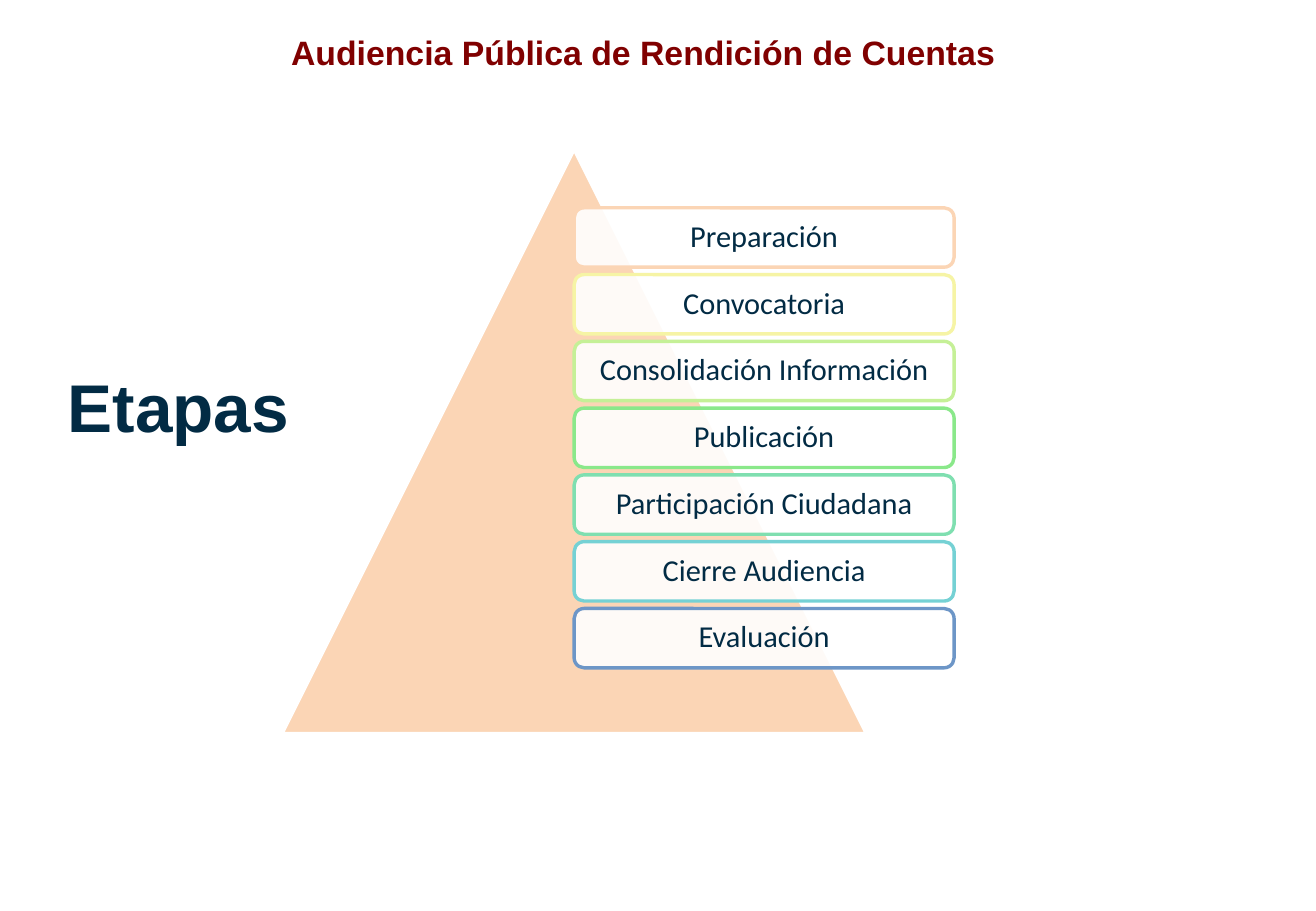
from pptx import Presentation
from pptx import util as u
from pptx.dml.color import RGBColor
from pptx.enum import shapes, text
from pptx.oxml.ns import qn
from lxml import etree

WIDE, HIGH = 10.83, 7.5
NAVY, MAROON, PEACH, WHITE = "022B44", "800000", "FBD5B5", "FFFFFF"
STAGES = [
    ("Preparación", PEACH),
    ("Convocatoria", "F6F4A5"),
    ("Consolidación Información", "C5F097"),
    ("Publicación", "8AE88A"),
    ("Participación Ciudadana", "7FDFB0"),
    ("Cierre Audiencia", "75D1D4"),
    ("Evaluación", "6D96C7"),
]


def tint(color, code):
    color.rgb = RGBColor.from_string(code)


def write(frame, words, face, size, code, bold=False, align=text.PP_ALIGN.CENTER):
    para = frame.paragraphs[0]
    para.alignment = align
    run = para.add_run()
    run.text = words
    run.font.name, run.font.size, run.font.bold = face, u.Pt(size), bold
    tint(run.font.color, code)
    return para


def label(slide, box, words, size, code, wrap, align):
    area = slide.shapes.add_textbox(*map(u.Inches, box))
    area.text_frame.word_wrap = wrap
    write(area.text_frame, words, "Arial", size, code, True, align)


def block(slide, kind, box, fill, edge):
    item = slide.shapes.add_shape(kind, *map(u.Inches, box))
    item.shadow.inherit = False
    item.fill.solid()
    tint(item.fill.fore_color, fill)
    tint(item.line.color, edge)
    item.line.width = u.Pt(2)
    return item


def stage(slide, box, words, edge):
    card = block(slide, shapes.MSO_SHAPE.ROUNDED_RECTANGLE, box, WHITE, edge)
    shade = card.fill._xPr.find(qn("a:solidFill"))[0]
    etree.SubElement(shade, qn("a:alpha"), val="90000")
    frame = card.text_frame
    frame.word_wrap = True
    frame.vertical_anchor = text.MSO_ANCHOR.MIDDLE
    frame.margin_left = frame.margin_right = u.Inches(0.09)
    frame.margin_top = frame.margin_bottom = u.Inches(0.07)
    write(frame, words, "Calibri", 18, NAVY).line_spacing = 0.9


def pyramid(slide, left, top, side):
    """Triangle with one card per stage, stacked from its middle axis."""
    block(slide, shapes.MSO_SHAPE.ISOSCELES_TRIANGLE,
          (left, top, side, side), PEACH, WHITE)
    step = side * 0.8 / len(STAGES)
    for row, (words, edge) in enumerate(STAGES):
        box = (left + side / 2, top + side / 10 + row * step,
               side * 0.65, step * 8 / 9)
        stage(slide, box, words, edge)


def main():
    deck = Presentation()
    deck.slide_width, deck.slide_height = u.Inches(WIDE), u.Inches(HIGH)
    slide = deck.slides.add_slide(deck.slide_layouts[6])
    label(slide, (0.46, 2.96, 2.04, 0.77), "Etapas", 40, NAVY,
          False, text.PP_ALIGN.LEFT)
    pyramid(slide, 2.32, 1.23, 4.81)
    label(slide, (1.87, 0.21, 6.85, 0.44),
          "Audiencia Pública de Rendición de Cuentas", 20, MAROON,
          True, text.PP_ALIGN.CENTER)
    deck.save("out.pptx")


if __name__ == "__main__":
    main()
